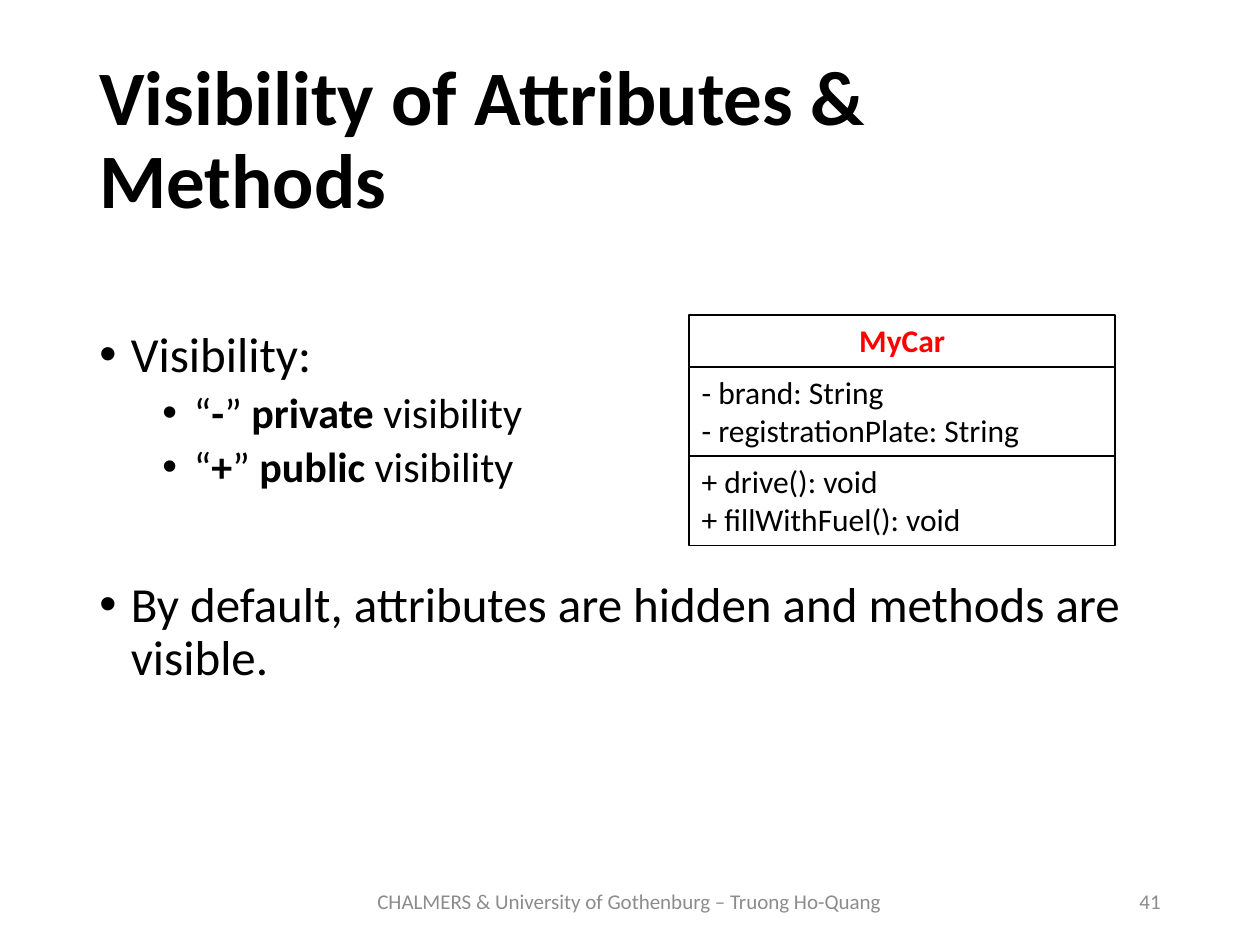
from lxml.etree import SubElement
from pptx import Presentation
from pptx.dml.color import RGBColor
from pptx.enum.shapes import MSO_SHAPE
from pptx.enum.text import MSO_ANCHOR, PP_ALIGN
from pptx.oxml.ns import qn
from pptx.util import Inches, Pt


def color(code):
    """Turn a hex string into a colour."""
    return RGBColor.from_string(code)


def write(para, text, size, code="000000", bold=False):
    """Add one run of text to a paragraph."""
    run = para.add_run()
    run.text = text
    font = run.font
    font.name, font.size, font.bold = "Calibri", Pt(size), bold
    font.color.rgb = color(code)


def text_box(slide, area, anchor=MSO_ANCHOR.MIDDLE):
    """Add a wrapping text box and return its text frame."""
    frame = slide.shapes.add_textbox(*map(Inches, area)).text_frame
    frame.word_wrap = True
    frame.vertical_anchor = anchor
    return frame


def label(slide, area, text, size, code, align, bold=False):
    """Add a text box that holds one paragraph."""
    para = text_box(slide, area).paragraphs[0]
    para.alignment = align
    write(para, text, size, code, bold)
    return para


def bullet(para, left, gap, size, parts):
    """Fill a bulleted paragraph, with every second part in bold."""
    props = para._p.get_or_add_pPr()
    props.set("marL", str(Inches(left)))
    props.set("indent", str(Inches(-0.25)))
    SubElement(props, qn("a:buFont"), typeface="Arial")
    SubElement(props, qn("a:buChar"), char="•")
    para.line_spacing = 0.9
    para.space_before = Pt(gap)
    for index, part in enumerate(parts):
        write(para, part, size, bold=index % 2 == 1)


def bullets(slide, area, items):
    """Add a text box with a bulleted list."""
    frame = text_box(slide, area, MSO_ANCHOR.TOP)
    for index, item in enumerate(items):
        para = frame.add_paragraph() if index else frame.paragraphs[0]
        bullet(para, *item)


def section(slide, top, height, lines, code="000000", head=False):
    """Add one compartment of the class box."""
    area = map(Inches, (5.47, top, 3.38, height))
    box = slide.shapes.add_shape(MSO_SHAPE.RECTANGLE, *area)
    box.shadow.inherit = False
    box.fill.solid()
    box.fill.fore_color.rgb = color("FFFFFF")
    box.line.color.rgb = color("000000")
    box.line.width = Pt(1)
    frame = box.text_frame
    frame.word_wrap = True
    frame.vertical_anchor = MSO_ANCHOR.TOP
    for index, line in enumerate(lines):
        para = frame.add_paragraph() if index else frame.paragraphs[0]
        para.alignment = PP_ALIGN.CENTER if head else PP_ALIGN.LEFT
        write(para, line, 18, code, head)


def class_box(slide, top, name, *groups):
    """Stack the name and member compartments of a class."""
    section(slide, top, 0.41, [name], "FF0000", True)
    for index, lines in enumerate(groups):
        section(slide, top + 0.41 + index * 0.71, 0.71, lines)


def main():
    """Build the slide and save it."""
    deck = Presentation()
    deck.slide_width, deck.slide_height = Inches(10), Inches(7.5)
    slide = deck.slides.add_slide(deck.slide_layouts[6])
    title = label(slide, (0.69, 0.4, 8.62, 1.45),
                  "Visibility of Attributes & Methods",
                  44, "000000", PP_ALIGN.LEFT, True)
    title.line_spacing = 0.9
    bullets(slide, (0.69, 2.57, 8.62, 4.19), [
        (0.25, 0, 28, ["Visibility:"]),
        (0.75, 5, 24, ["“", "-", "” ", "private", " visibility"]),
        (0.75, 5, 24, ["“", "+", "” ", "public", " visibility"]),
        (0.25, 51, 28, ["By default, attributes are hidden and methods "
                        "are visible."]),
    ])
    class_box(slide, 2.5, "MyCar",
              ["- brand: String", "- registrationPlate: String"],
              ["+ drive(): void", "+ fillWithFuel(): void"])
    label(slide, (2.72, 6.95, 4.55, 0.4),
          "CHALMERS & University of Gothenburg – Truong Ho-Quang",
          12, "8C8C8C", PP_ALIGN.CENTER)
    label(slide, (7.06, 6.95, 2.25, 0.4), "41", 12, "8C8C8C", PP_ALIGN.RIGHT)
    deck.save("out.pptx")


if __name__ == "__main__":
    main()
